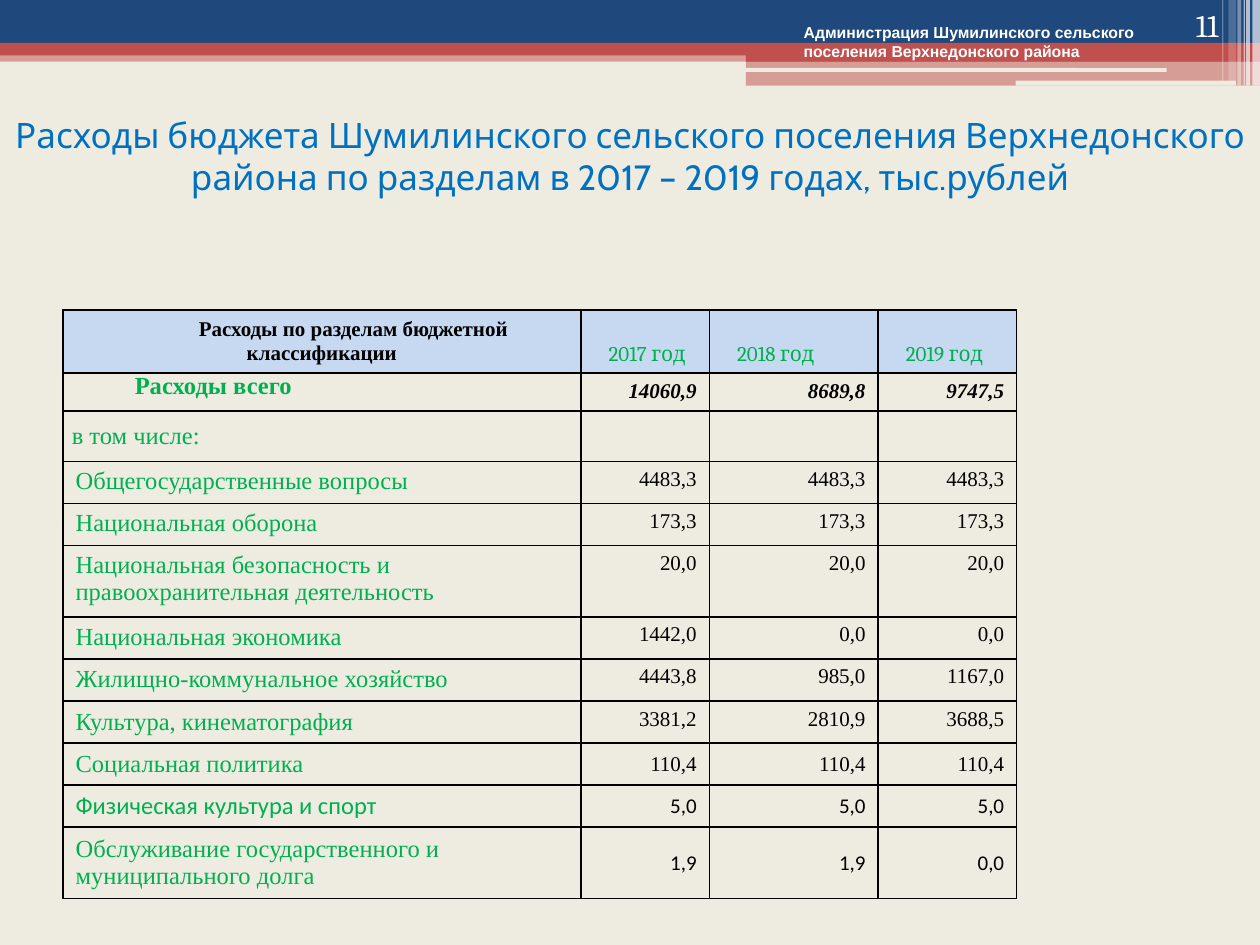
"""Builds the slide with settlement budget spending by section for 2017 to 2019."""
from dataclasses import dataclass, field
from typing import Any, NamedTuple

import lxml.etree
import pptx
import pptx.dml.color
import pptx.enum.shapes
import pptx.enum.text
import pptx.oxml.ns
import pptx.util

ALIGN = pptx.enum.text.PP_ALIGN
ANCHOR = pptx.enum.text.MSO_ANCHOR
SHAPE = pptx.enum.shapes.MSO_SHAPE
qn = pptx.oxml.ns.qn

GRID_COLUMNS = 1000
SLIDE_WIDTH = pptx.util.Inches(10)
SLIDE_HEIGHT = pptx.util.Inches(7.5)
UNIT = SLIDE_WIDTH // GRID_COLUMNS

NAVY, RED, CREAM, WHITE, BLACK = "1F497D", "C0504D", "EEECE1", "FFFFFF", "000000"
GREEN, TITLE_BLUE, HEADER_BLUE = "00B050", "0070C0", "C6D9F1"
SERIF = "Times New Roman"


class Area(NamedTuple):
    """A place on the slide in grid columns and rows."""
    left: float
    top: float
    width: float
    height: float


class Band(NamedTuple):
    """A decorative bar with its opacity in percent."""
    area: Area
    color: str
    opacity: int = 100
    rounded: bool = False


@dataclass
class Style:
    """Formatting of one paragraph and of the frame that holds it."""
    size: float
    font: str
    color: str
    bold: bool = False
    italic: bool = False
    align: Any = ALIGN.LEFT
    anchor: Any = ANCHOR.TOP
    margin: float = 0
    indent: float = 0
    spacing: dict = field(default_factory=dict)


class Section(NamedTuple):
    """One budget section with its yearly amounts."""
    label: str
    amounts: tuple
    height: float = 30
    label_anchor: Any = ANCHOR.TOP
    amount_anchor: Any = ANCHOR.TOP
    label_font: str = SERIF
    amount_font: str = SERIF
    space_after: float = 0


MIDDLE = ANCHOR.MIDDLE
BANDS = [
    Band(Area(0, 40, 1000, 9), RED, 50),
    Band(Area(0, 0, 1000, 34), NAVY),
    Band(Area(0, 34, 1000, 10), RED),
    Band(Area(592, 39, 408, 10), RED),
    Band(Area(592, 48, 408, 20), RED, 50),
    Band(Area(591, 54, 335, 3), CREAM, rounded=True),
    Band(Area(806, 64, 175, 4), CREAM, rounded=True),
    Band(Area(994, 0, 6, 68), WHITE, 65),
    Band(Area(989, 0, 3, 68), WHITE, 65),
    Band(Area(987, 0, 1, 68), WHITE, 60),
    Band(Area(982, 0, 3, 68), WHITE, 40),
    Band(Area(975, 0, 6, 64), WHITE, 20),
    Band(Area(970, 0, 1, 64), WHITE, 30),
]
YEARS = ("2017 год", "2018 год", "2019 год")
COLUMN_WIDTHS = (411, 102, 134, 110)
HEADER_HEIGHT = 50
TOTAL = Section("Расходы всего", ("14060,9", "8689,8", "9747,5"))
INCLUDING = Section("в том числе:", ())
SECTIONS = [
    Section("Общегосударственные вопросы", ("4483,3",) * 3),
    Section("Национальная оборона", ("173,3",) * 3),
    Section("Национальная безопасность и правоохранительная деятельность", ("20,0",) * 3, 50),
    Section("Национальная экономика", ("1442,0", "0,0", "0,0")),
    Section("Жилищно-коммунальное хозяйство", ("4443,8", "985,0", "1167,0")),
    Section("Культура, кинематография", ("3381,2", "2810,9", "3688,5"), 30, MIDDLE),
    Section("Социальная политика", ("110,4",) * 3, 30, MIDDLE, MIDDLE),
    Section("Физическая культура и спорт", ("5,0",) * 3, 30, MIDDLE, MIDDLE, "Calibri", "Calibri"),
    Section("Обслуживание государственного и муниципального долга", ("1,9", "1,9", "0,0"),
            30, MIDDLE, MIDDLE, SERIF, "Calibri", 6),
]


def grid(count: float) -> int:
    """Return the length of a number of grid steps."""
    return int(count * UNIT)


def paint(color_target: Any, color: str) -> None:
    """Give a fill or a font a solid colour."""
    if hasattr(color_target, "solid"):
        color_target.solid()
        color_target = color_target.fore_color
    color_target.rgb = pptx.dml.color.RGBColor.from_string(color)


def assign(target: Any, values: dict) -> None:
    """Set each named attribute of the target."""
    for name, value in values.items():
        setattr(target, name, value)


def write(frame: Any, text: str, style: Style) -> None:
    """Put one formatted paragraph into a text frame."""
    paragraph = frame.paragraphs[0]
    run = paragraph.add_run()
    run.text = text
    assign(paragraph, {"alignment": style.align, **style.spacing})
    assign(run.font, {"size": pptx.util.Pt(style.size), "name": style.font,
                      "bold": style.bold, "italic": style.italic})
    paint(run.font.color, style.color)
    properties = paragraph._p.get_or_add_pPr()
    properties.set("marL", str(grid(style.margin)))
    properties.set("indent", str(grid(style.indent)))


def draw_band(slide: Any, band: Band) -> None:
    """Draw one decorative bar of the heading."""
    kind = SHAPE.ROUNDED_RECTANGLE if band.rounded else SHAPE.RECTANGLE
    bar = slide.shapes.add_shape(kind, *map(grid, band.area))
    bar.shadow.inherit = False
    bar.line.fill.background()
    paint(bar.fill, band.color)
    if band.opacity < 100:
        color = bar._element.spPr.find(qn("a:solidFill"))[0]
        lxml.etree.SubElement(color, qn("a:alpha"), val=str(band.opacity * 1000))


def add_label(slide: Any, area: Area, text: str, style: Style) -> None:
    """Add a wrapped text box."""
    frame = slide.shapes.add_textbox(*map(grid, area)).text_frame
    assign(frame, {"word_wrap": True, "vertical_anchor": style.anchor})
    write(frame, text, style)


def fill_cell(cell: Any, text: str, style: Style, narrow: bool = False) -> None:
    """Write a table cell and set its anchor and insets."""
    cell.vertical_anchor = style.anchor
    if narrow:
        assign(cell, {"margin_left": grid(7), "margin_right": grid(7),
                      "margin_top": 0, "margin_bottom": 0})
    write(cell.text_frame, text, style)


def frame_cell(cell: Any, color: str | None) -> None:
    """Draw the borders of a cell and fill it or leave it clear."""
    properties = cell._tc.get_or_add_tcPr()
    for side in ("lnL", "lnR", "lnT", "lnB"):
        border = lxml.etree.SubElement(properties, qn(f"a:{side}"), w=str(pptx.util.Pt(1)))
        solid = lxml.etree.SubElement(border, qn("a:solidFill"))
        lxml.etree.SubElement(solid, qn("a:srgbClr"), val=BLACK)
    if color:
        paint(cell.fill, color)
    else:
        cell.fill.background()


def label_style(section: Section) -> Style:
    """Return the style of a section name."""
    if section is TOTAL:
        return Style(14, SERIF, GREEN, bold=True, indent=50)
    if section is INCLUDING:
        return Style(14, SERIF, GREEN, anchor=MIDDLE, spacing={"space_after": pptx.util.Pt(6)})
    return Style(14, section.label_font, GREEN, anchor=section.label_anchor,
                 spacing={"space_after": pptx.util.Pt(section.space_after)})


def add_budget(slide: Any) -> None:
    """Add the table of spending by section."""
    sections = [TOTAL, INCLUDING, *SECTIONS]
    heights = [HEADER_HEIGHT, *(section.height for section in sections)]
    area = Area(50, 246, sum(COLUMN_WIDTHS), sum(heights))
    budget = slide.shapes.add_table(len(heights), len(COLUMN_WIDTHS), *map(grid, area)).table
    assign(budget, {"first_row": False, "horz_banding": False})
    for column, width in zip(budget.columns, COLUMN_WIDTHS):
        column.width = grid(width)
    for index, (row, height) in enumerate(zip(budget.rows, heights)):
        row.height = grid(height)
        for cell in row.cells:
            frame_cell(cell, HEADER_BLUE if index == 0 else None)

    fill_cell(budget.cell(0, 0), "Расходы по разделам бюджетной классификации",
              Style(12, SERIF, BLACK, bold=True, align=ALIGN.CENTER, anchor=MIDDLE, indent=50))
    year_style = Style(12, "Cambria", GREEN, anchor=ANCHOR.BOTTOM, margin=12,
                       spacing={"space_before": pptx.util.Pt(3)})
    for column, year in enumerate(YEARS, 1):
        fill_cell(budget.cell(0, column), year, year_style)
    for row, section in enumerate(sections, 1):
        total = section is TOTAL
        fill_cell(budget.cell(row, 0), section.label, label_style(section),
                  narrow=total or section is INCLUDING)
        amount_style = Style(12, section.amount_font, BLACK, bold=total, italic=total,
                             align=ALIGN.RIGHT, anchor=MIDDLE if total else section.amount_anchor)
        for column, amount in enumerate(section.amounts, 1):
            fill_cell(budget.cell(row, column), amount, amount_style)


def main() -> None:
    """Build and save the presentation."""
    deck = pptx.Presentation()
    assign(deck, {"slide_width": SLIDE_WIDTH, "slide_height": SLIDE_HEIGHT})
    slide = deck.slides.add_slide(deck.slide_layouts[5])
    paint(slide.background.fill, CREAM)
    for band in BANDS:
        draw_band(slide, band)
    heading = slide.shapes.title
    assign(heading, dict(zip(Area._fields, map(grid, Area(0, 84, 1000, 79)))))
    assign(heading.text_frame, {"word_wrap": True, "vertical_anchor": MIDDLE,
                                "auto_size": pptx.enum.text.MSO_AUTO_SIZE.NONE})
    write(heading.text_frame, "Расходы бюджета Шумилинского сельского поселения Верхнедонского "
          "района по разделам в 2017 – 2019 годах, тыс.рублей",
          Style(20, "Cabin", TITLE_BLUE, align=ALIGN.CENTER))
    add_label(slide, Area(894, 0, 83, 40), "11",
              Style(18, "Cambria", WHITE, align=ALIGN.RIGHT, anchor=ANCHOR.BOTTOM))
    add_label(slide, Area(628, 13, 311, 40),
              "Администрация Шумилинского сельского поселения Верхнедонского района",
              Style(9, "Arial", WHITE, bold=True))
    add_budget(slide)
    deck.save("out.pptx")


if __name__ == "__main__":
    main()
